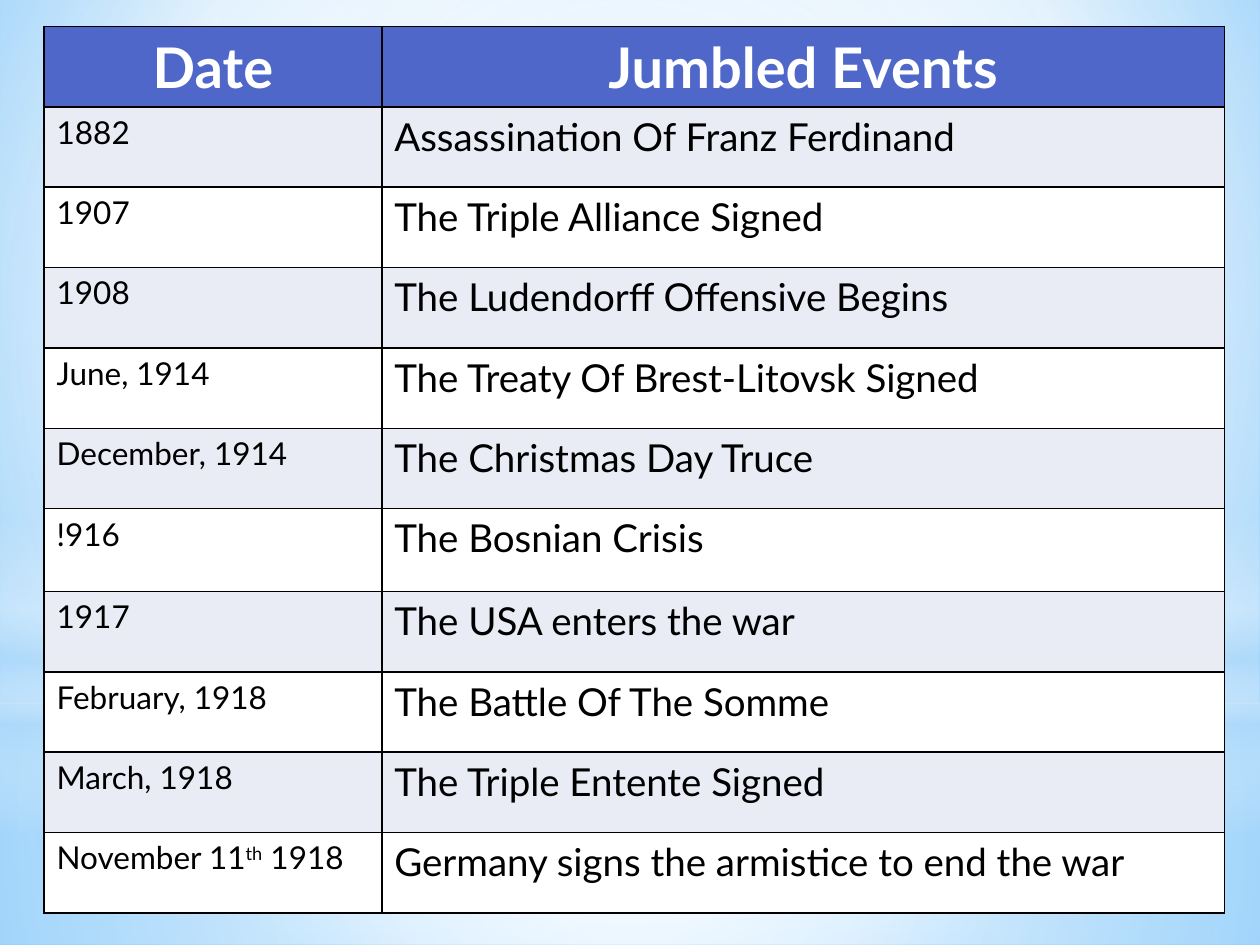
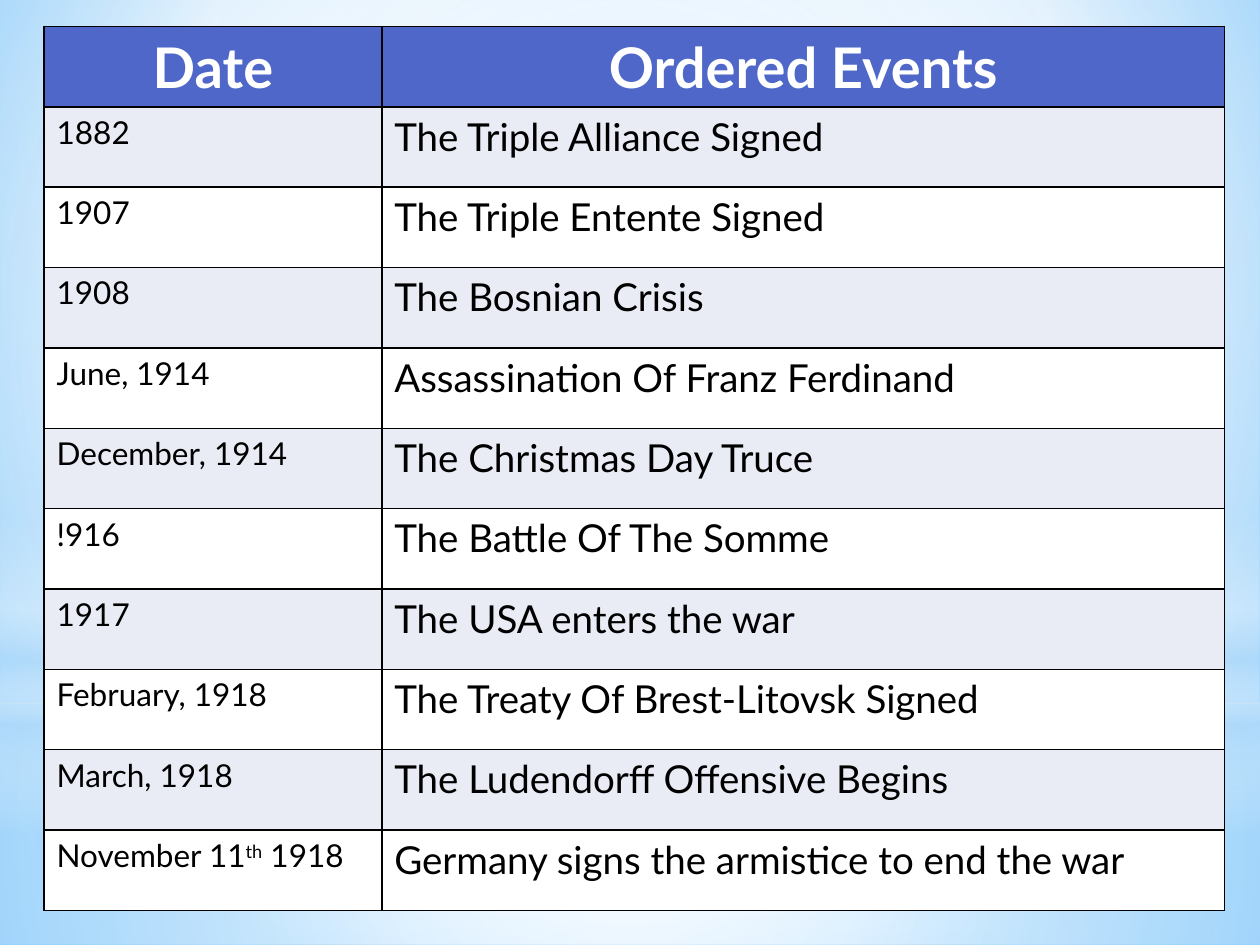
from dataclasses import dataclass

import lxml.etree
import pptx
import pptx.dml.color
import pptx.enum.shapes
import pptx.enum.text
import pptx.oxml
import pptx.oxml.ns
import pptx.util

Inches = pptx.util.Inches
Pt = pptx.util.Pt
qn = pptx.oxml.ns.qn
SHAPE = pptx.enum.shapes.MSO_SHAPE
ALIGN = pptx.enum.text.PP_ALIGN

COLORS = {
    "white": "FFFFFF",
    "black": "000000",
    "header": "4E67C8",
    "band": "E9EBF5",
    "sky": "9ED5FF",
    "deep_sky": "5BB9FF",
    "haze": "B4DCFA",
}
FONT = "Lato"
FORMATS = {
    "header": {"size": Pt(32), "bold": True, "color": "white"},
    "date": {"size": Pt(18), "bold": False, "color": "black"},
    "event": {"size": Pt(22), "bold": False, "color": "black"},
}


@dataclass
class Gradient:
    stops: list[tuple[int, str, int]]  # position %, colour name, opacity %
    focus: tuple[int, int, int, int] | None = (50, 50, 50, 50)  # None: top to bottom


@dataclass
class Glow:
    kind: pptx.enum.shapes.MSO_SHAPE
    top: float
    height: float
    gradient: Gradient


@dataclass
class EventTable:
    heading: str
    order: list[int]
    extra_heights: dict[int, float]  # row index -> additional inches


BACKGROUND = Gradient(
    [(0, "sky", 100), (60, "white", 100), (100, "deep_sky", 100)], (20, 10, 20, 60))
GLOWS = [
    Glow(SHAPE.RECTANGLE, 5.58, 1.92,
         Gradient([(0, "white", 91), (37, "white", 76), (100, "haze", 79)])),
    Glow(SHAPE.RECTANGLE, 0, 5.58,
         Gradient([(0, "white", 89), (48, "white", 62), (100, "haze", 79)])),
    Glow(SHAPE.RECTANGLE, 4.12, 2.5,
         Gradient([(0, "white", 0), (29, "white", 30), (45, "haze", 40),
                   (55, "white", 26), (65, "haze", 60), (100, "white", 0)], None)),
    Glow(SHAPE.OVAL, 1.75, 5.58,
         Gradient([(0, "white", 100), (56, "white", 0)])),
]

# Dates and events are both chronological; "^" encloses superscript text.
DATES = ["1882", "1907", "1908", "June, 1914", "December, 1914", "!916", "1917",
         "February, 1918", "March, 1918", "November 11^th^ 1918"]
EVENTS = [
    "The Triple Alliance Signed",
    "The Triple Entente Signed",
    "The Bosnian Crisis",
    "Assassination Of Franz Ferdinand",
    "The Christmas Day Truce",
    "The Battle Of The Somme",
    "The USA enters the war",
    "The Treaty Of Brest-Litovsk Signed",
    "The Ludendorff Offensive Begins",
    "Germany signs the armistice to end the war",
]
TABLES = [
    EventTable("Jumbled Events", [3, 0, 8, 7, 4, 2, 6, 5, 1, 9], {6: 0.02}),
    EventTable("Ordered Events", list(range(len(EVENTS))), {}),
]
COLUMN_WIDTHS = [2.68, 6.69]
TABLE_HEIGHT = 7.02


def rgb(name: str) -> pptx.dml.color.RGBColor:
    return pptx.dml.color.RGBColor.from_string(COLORS[name])


def fill_gradient(fill, owner, gradient: Gradient) -> None:
    """Give the fill, whose XML lies inside owner, the gradient."""
    fill.background()
    placeholder = owner.find(".//" + qn("a:noFill"))
    grad = lxml.etree.Element(qn("a:gradFill"), rotWithShape="1")
    stops = lxml.etree.SubElement(grad, qn("a:gsLst"))
    for position, color, opacity in gradient.stops:
        gs = lxml.etree.SubElement(stops, qn("a:gs"), pos=str(position * 1000))
        clr = lxml.etree.SubElement(gs, qn("a:srgbClr"), val=COLORS[color])
        lxml.etree.SubElement(clr, qn("a:alpha"), val=str(opacity * 1000))
    if gradient.focus is None:
        lxml.etree.SubElement(grad, qn("a:lin"), ang="5400000", scaled="0")
    else:
        radial = lxml.etree.SubElement(grad, qn("a:path"))
        radial.set("path", "circle")
        sides = {side: str(v * 1000) for side, v in zip("ltrb", gradient.focus)}
        lxml.etree.SubElement(radial, qn("a:fillToRect"), **sides)
    placeholder.getparent().replace(placeholder, grad)


def add_glow(slide, glow: Glow) -> None:
    sp = slide.shapes.add_shape(
        glow.kind, 0, Inches(glow.top), Inches(10), Inches(glow.height))
    sp.shadow.inherit = False
    fill_gradient(sp.fill, sp.element, glow.gradient)
    sp.line.fill.background()


def add_borders(cell) -> None:
    tc_pr = cell._tc.get_or_add_tcPr()
    for i, side in enumerate(("lnL", "lnR", "lnT", "lnB")):
        ln = lxml.etree.Element(qn(f"a:{side}"), w=str(Pt(1)))
        solid = lxml.etree.SubElement(ln, qn("a:solidFill"))
        lxml.etree.SubElement(solid, qn("a:srgbClr"), val=COLORS["black"])
        tc_pr.insert(i, ln)


def fill_cell(cell, text: str, style: str, fill: str) -> None:
    cell.fill.solid()
    cell.fill.fore_color.rgb = rgb(fill)
    add_borders(cell)
    p = cell.text_frame.paragraphs[0]
    p.alignment = ALIGN.CENTER if style == "header" else ALIGN.LEFT
    for i, part in enumerate(text.split("^")):
        r = p.add_run()
        r.text = part
        r.font.name = FONT
        for name, value in FORMATS[style].items():
            if name == "color":
                r.font.color.rgb = rgb(value)
            else:
                setattr(r.font, name, value)
        if i % 2:
            r._r.get_or_add_rPr().set("baseline", "30000")


def add_event_table(slide, content: EventTable) -> None:
    rows = [("Date", content.heading)]
    rows += [(date, EVENTS[i]) for date, i in zip(DATES, content.order)]
    table = slide.shapes.add_table(
        len(rows), len(COLUMN_WIDTHS), Inches(0.35), Inches(0.21),
        Inches(sum(COLUMN_WIDTHS)),
        Inches(TABLE_HEIGHT + sum(content.extra_heights.values()))).table
    table.horz_banding = False
    for column, width in zip(table.columns, COLUMN_WIDTHS):
        column.width = Inches(width)
    for i, texts in enumerate(rows):
        table.rows[i].height = Inches(
            TABLE_HEIGHT / len(rows) + content.extra_heights.get(i, 0))
        fill = "header" if i == 0 else "band" if i % 2 else "white"
        styles = ("header", "header") if i == 0 else ("date", "event")
        for j, (text, style) in enumerate(zip(texts, styles)):
            fill_cell(table.cell(i, j), text, style, fill)


def main() -> None:
    prs = pptx.Presentation()
    prs.slide_width, prs.slide_height = Inches(10), Inches(7.5)
    master = prs.slide_master
    fill_gradient(master.background.fill, master.element, BACKGROUND)
    for content in TABLES:
        slide = prs.slides.add_slide(prs.slide_layouts[6])
        for glow in GLOWS:
            add_glow(slide, glow)
        add_event_table(slide, content)
    prs.save("out.pptx")


if __name__ == "__main__":
    main()
